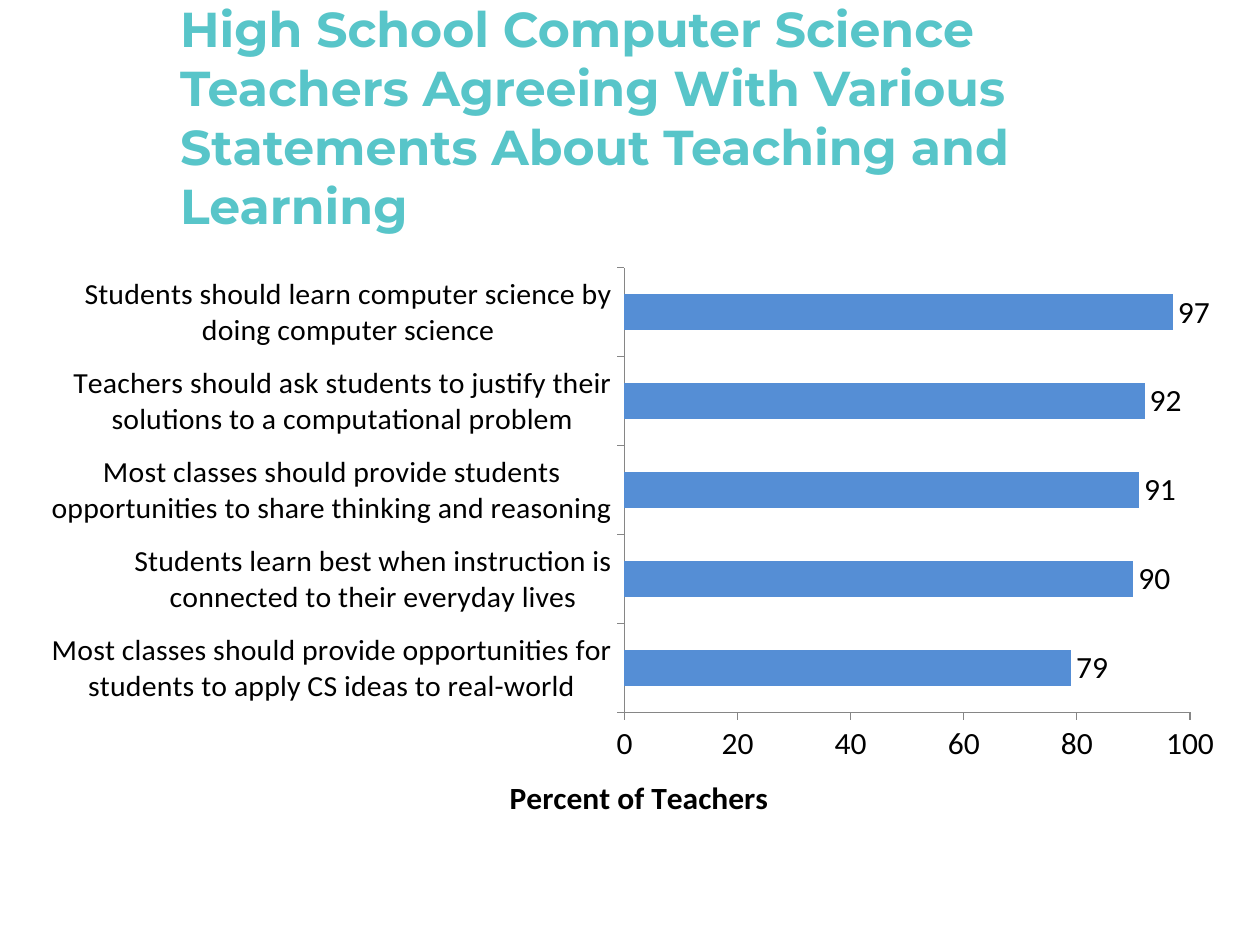
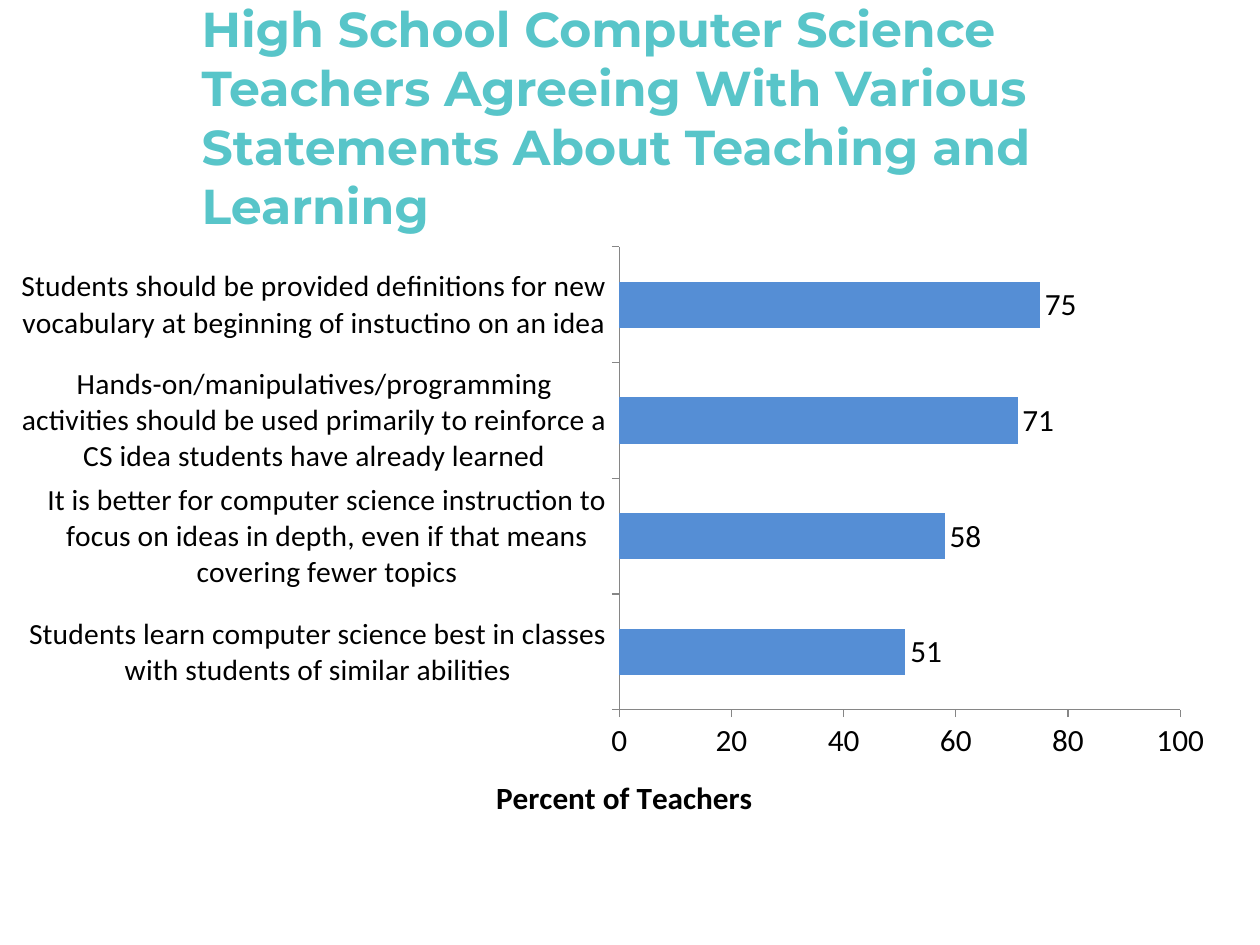
"""Build two slides charting computer science teachers' views on teaching and learning."""
from lxml import etree
from pptx import Presentation
from pptx.chart.data import CategoryChartData
from pptx.dml.color import RGBColor
from pptx.enum.chart import XL_CHART_TYPE, XL_LABEL_POSITION, XL_TICK_MARK
from pptx.enum.text import MSO_ANCHOR, MSO_AUTO_SIZE, PP_ALIGN
from pptx.oxml.ns import qn
from pptx.util import Inches, Pt

BAR_CLUSTERED = XL_CHART_TYPE.BAR_CLUSTERED
OUTSIDE_END = XL_LABEL_POSITION.OUTSIDE_END
TICK_OUTSIDE = XL_TICK_MARK.OUTSIDE
TICK_NONE = XL_TICK_MARK.NONE
MIDDLE = MSO_ANCHOR.MIDDLE
NO_AUTOFIT = MSO_AUTO_SIZE.NONE
LEFT = PP_ALIGN.LEFT

TEAL = RGBColor(0x58, 0xC5, 0xC9)
BLUE = RGBColor(0x55, 0x8E, 0xD5)
GRAY = RGBColor(0x86, 0x86, 0x86)
BLACK = RGBColor(0, 0, 0)

TITLE = ("High School Computer Science Teachers Agreeing With Various "
         "Statements About Teaching and Learning")
TITLE_ONLY = 5
TITLE_RIGHT = 9.49
PLOT_LAYOUT = {"layoutTarget": "inner", "xMode": "edge", "yMode": "edge",
               "x": 0.497, "y": 0.028, "w": 0.474, "h": 0.793}

SLIDES = [
    {"title_left": 1.33, "chart_box": (0.25, 2, 9.47, 4.56), "axis_title_x": 0.396,
     "agreement": [
         ("Most classes should provide opportunities for students to apply CS ideas "
          "to real-world", 79),
         ("Students learn best when instruction is connected to their everyday lives", 90),
         ("Most classes should provide students opportunities to share thinking "
          "and reasoning", 91),
         ("Teachers should ask students to justify their solutions to a "
          "computational problem", 92),
         ("Students should learn computer science by doing computer science", 97)]},
    {"title_left": 1.5, "chart_box": (0.17, 1.83, 9.47, 4.73), "axis_title_x": 0.388,
     "agreement": [
         ("Students learn computer science best in classes with students of "
          "similar abilities", 51),
         ("It is better for computer science instruction to focus on ideas in depth, "
          "even if that means covering fewer topics", 58),
         ("Hands-on/manipulatives/programming activities should be used primarily to "
          "reinforce a CS idea students have already learned", 71),
         ("Students should be provided definitions for new vocabulary at beginning of "
          "instuctino on an idea", 75)]},
]


def set_font(font, size, color, name="Calibri", bold=False):
    font.name, font.size, font.bold = name, Pt(size), bold
    font.color.rgb = color


def set_layout(parent, after, settings):
    for existing in parent.findall(qn("c:layout")):
        parent.remove(existing)
    layout = etree.Element(qn("c:layout"))
    manual = etree.SubElement(layout, qn("c:manualLayout"))
    for key, value in settings.items():
        etree.SubElement(manual, qn(f"c:{key}")).set("val", str(value))
    if after is None:
        parent.insert(0, layout)
    else:
        after.addnext(layout)


prs = Presentation()
prs.slide_width, prs.slide_height = Inches(10), Inches(7.5)

for content in SLIDES:
    slide = prs.slides.add_slide(prs.slide_layouts[TITLE_ONLY])

    data = CategoryChartData()
    data.categories = [statement for statement, percent in content["agreement"]]
    data.add_series("Series 1", [percent for statement, percent in content["agreement"]])
    box = [Inches(length) for length in content["chart_box"]]
    chart = slide.shapes.add_chart(BAR_CLUSTERED, *box, data).chart
    chart.has_title = False
    chart.has_legend = False
    set_font(chart.font, 18, BLACK)
    set_layout(chart.plots[0]._element.getparent(), None, PLOT_LAYOUT)

    statements, percents = chart.category_axis, chart.value_axis
    for axis in (statements, percents):
        axis.has_major_gridlines = False
        axis.major_tick_mark = TICK_OUTSIDE
        axis.minor_tick_mark = TICK_NONE
        axis.format.line.color.rgb = GRAY
        axis.format.line.width = Pt(0.75)
    set_font(statements.tick_labels.font, 17, BLACK)
    percents.minimum_scale, percents.maximum_scale = 0, 100
    percents.major_unit = 20

    axis_title = percents.axis_title
    axis_title.text_frame.text = "Percent of Teachers"
    set_font(axis_title.text_frame.paragraphs[0].font, 18, BLACK, bold=True)
    axis_title_xml = axis_title._element
    set_layout(axis_title_xml, axis_title_xml.find(qn("c:tx")),
               {"xMode": "edge", "yMode": "edge", "x": content["axis_title_x"], "y": 0.925})

    plot = chart.plots[0]
    plot.gap_width = 150
    plot.vary_by_categories = False
    plot.has_data_labels = True
    plot.data_labels.show_value = True
    plot.data_labels.position = OUTSIDE_END
    set_font(plot.data_labels.font, 18, BLACK)
    bars = plot.series[0].format
    bars.fill.solid()
    bars.fill.fore_color.rgb = BLUE

    title = slide.shapes.title
    title.left, title.top = Inches(content["title_left"]), Inches(0.3)
    title.width, title.height = Inches(TITLE_RIGHT - content["title_left"]), Inches(1.25)
    frame = title.text_frame
    frame.text = TITLE
    frame.word_wrap = True
    frame.auto_size = NO_AUTOFIT
    frame.vertical_anchor = MIDDLE
    frame.paragraphs[0].alignment = LEFT
    set_font(frame.paragraphs[0].font, 28, TEAL, "Montserrat", True)

prs.save("out.pptx")
